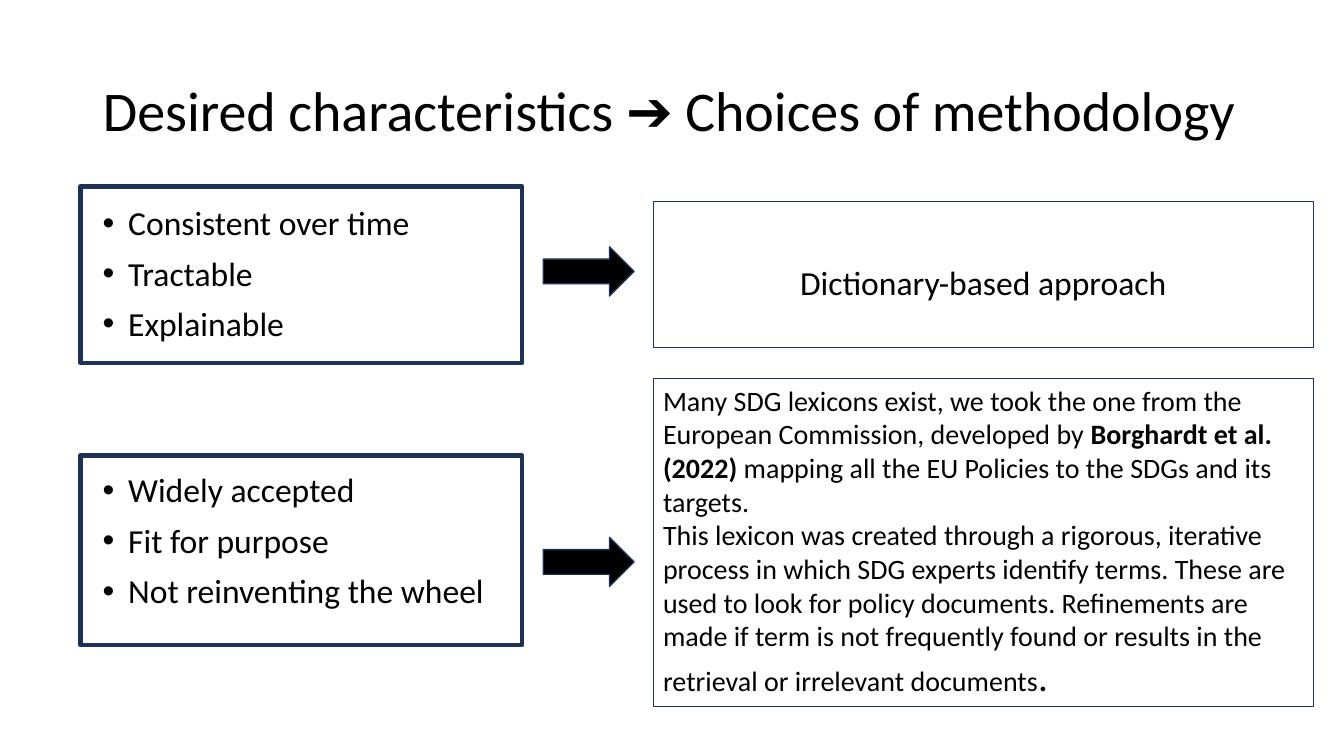
import pptx
import pptx.dml.color
import pptx.enum.shapes
import pptx.enum.text
import pptx.oxml.ns
import pptx.util
from lxml import etree

Cm, Pt = pptx.util.Cm, pptx.util.Pt
RGBColor = pptx.dml.color.RGBColor
MSO_SHAPE = pptx.enum.shapes.MSO_SHAPE
PP_ALIGN = pptx.enum.text.PP_ALIGN
MSO_ANCHOR = pptx.enum.text.MSO_ANCHOR

BLACK = RGBColor(0x00, 0x00, 0x00)
NAVY = RGBColor(0x1E, 0x32, 0x56)
FONT = "Calibri"

# Content: a paragraph is a list of (text, format changes) runs
TITLE = "Desired characteristics ➔ Choices of methodology"
LEXICON = [
    [("Many SDG lexicons exist, we took the one from the European Commission, developed by ", {}),
     ("Borghardt et al. (2022)", {"bold": True}),
     (" mapping all the EU Policies to the SDGs and its targets.", {})],
    [("This lexicon was created through a rigorous, iterative process in which SDG experts "
      "identify terms. These are used to look for policy documents. Refinements are made if "
      "term is not frequently found or results in the retrieval or irrelevant documents", {}),
     (".", {"size": 28})],
]
# Each row: top, height and top inset (cm) of both boxes, and the arrow's top
ROWS = [
    {"traits": ["Consistent over time", "Tractable", "Explainable"],
     "traits_box": (4.7, 4.45, 0.51),
     "choice": [[("Dictionary-based approach", {})]],
     "choice_box": (5.08, 3.68, 0.64),
     "choice_format": {"size": 24, "align": PP_ALIGN.CENTER, "anchor": MSO_ANCHOR.MIDDLE,
                       "line_spacing": 0.9},
     "arrow_top": 6.22},
    {"traits": ["Widely accepted", "Fit for purpose", "Not reinventing the wheel"],
     "traits_box": (11.48, 4.78, 0.46),
     "choice": LEXICON,
     "choice_box": (9.53, 8.28, 0.13),
     "choice_format": {"size": 20},
     "arrow_top": 13.54},
]

# Columns: left, width (cm)
TRAITS_COLUMN = (2.03, 11.13)
ARROW_COLUMN = (13.69, 2.29)
CHOICE_COLUMN = (16.46, 16.64)
ARROW_HEIGHT = 1.24


def write(frame, paragraphs, size, align=PP_ALIGN.LEFT, anchor=MSO_ANCHOR.TOP,
          line_spacing=1.0, space_before=0, bullets=False):
    frame.word_wrap = True
    frame.vertical_anchor = anchor
    for index, runs in enumerate(paragraphs):
        paragraph = frame.paragraphs[0] if index == 0 else frame.add_paragraph()
        paragraph.alignment = align
        paragraph.line_spacing = line_spacing
        paragraph.space_before = Pt(space_before)
        if bullets:
            properties = paragraph._p.get_or_add_pPr()
            properties.set("marL", str(Cm(0.64)))
            properties.set("indent", str(-Cm(0.64)))
            for tag, key, value in (("a:buFont", "typeface", "Arial"), ("a:buChar", "char", "•")):
                etree.SubElement(properties, pptx.oxml.ns.qn(tag)).set(key, value)
        for text, changes in runs:
            run = paragraph.add_run()
            run.text = text
            run.font.name = FONT
            run.font.size = Pt(changes.get("size", size))
            run.font.bold = changes.get("bold", False)
            run.font.color.rgb = BLACK


def add_outlined(slide, kind, column, top, height, line_width):
    left, width = column
    shape = slide.shapes.add_shape(kind, Cm(left), Cm(top), Cm(width), Cm(height))
    shape.shadow.inherit = False
    shape.fill.background()
    shape.line.color.rgb = NAVY
    shape.line.width = Pt(line_width)
    return shape


def main():
    deck = pptx.Presentation()
    deck.slide_width, deck.slide_height = Cm(33.87), Cm(19.05)
    slide = deck.slides.add_slide(deck.slide_layouts[5])

    # Title
    title = slide.shapes.title
    title.left, title.top, title.width, title.height = Cm(2.34), Cm(1.02), Cm(31.52), Cm(3.68)
    write(title.text_frame, [[(TITLE, {})]], size=40, anchor=MSO_ANCHOR.MIDDLE, line_spacing=0.9)

    for row in ROWS:
        # Desired characteristics
        top, height, inset = row["traits_box"]
        traits = add_outlined(slide, MSO_SHAPE.RECTANGLE, TRAITS_COLUMN, top, height, 3)
        traits.text_frame.margin_left = Cm(0.56)
        traits.text_frame.margin_top = Cm(inset)
        write(traits.text_frame, [[(trait, {})] for trait in row["traits"]], size=24,
              line_spacing=0.9, space_before=10, bullets=True)

        # Choice of methodology
        top, height, inset = row["choice_box"]
        choice = add_outlined(slide, MSO_SHAPE.RECTANGLE, CHOICE_COLUMN, top, height, 0.75)
        choice.text_frame.margin_top = Cm(inset)
        write(choice.text_frame, row["choice"], **row["choice_format"])

        # Arrow between them
        arrow = add_outlined(slide, MSO_SHAPE.RIGHT_ARROW, ARROW_COLUMN, row["arrow_top"],
                             ARROW_HEIGHT, 1)
        arrow.fill.solid()
        arrow.fill.fore_color.rgb = BLACK

    deck.save("out.pptx")


if __name__ == "__main__":
    main()
